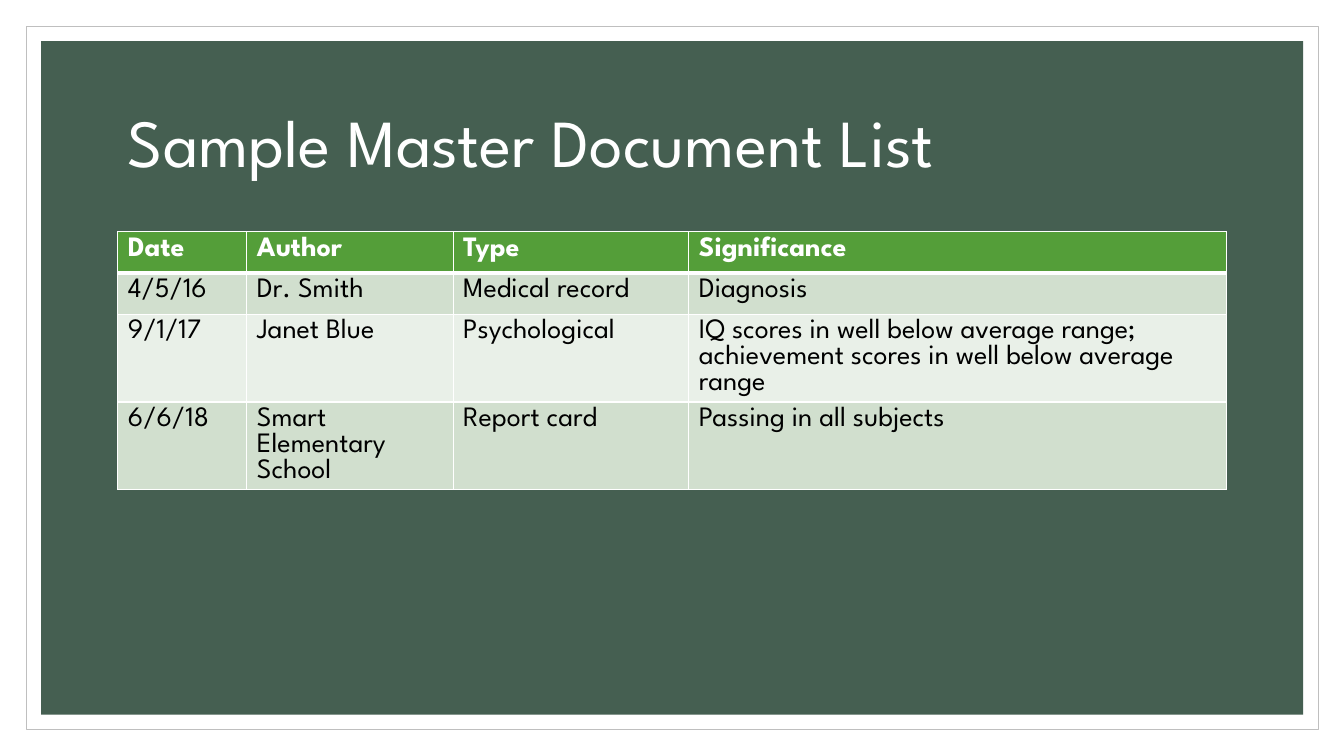
from dataclasses import dataclass

from lxml.etree import SubElement
from pptx import Presentation
from pptx.dml.color import RGBColor
from pptx.enum.shapes import MSO_SHAPE
from pptx.enum.text import MSO_ANCHOR, MSO_AUTO_SIZE, PP_ALIGN
from pptx.oxml.ns import qn
from pptx.util import Cm, Pt

FONT = "League Spartan"
WHITE, BLACK = "FFFFFF", "000000"
HEADER_FILL = "549E39"
BAND_FILLS = ("D1DFCE", "E9F0E8")
LEFT, WIDTH = 2.97, 27.94
ROW_HEIGHT = 1.04
COLUMN_WIDTHS = (3.25, 5.2, 5.94, 13.55)
DOCUMENTS = (
    ("Date", "Author", "Type", "Significance"),
    ("4/5/16", "Dr. Smith", "Medical record", "Diagnosis"),
    ("9/1/17", "Janet Blue", "Psychological",
     "IQ scores in well below average range; "
     "achievement scores in well below average range"),
    ("6/6/18", "Smart Elementary School", "Report card",
     "Passing in all subjects"),
)


@dataclass(frozen=True)
class Panel:
    left: float
    top: float
    width: float
    height: float
    fill: str
    line: str | None = None


PANELS = (
    Panel(0.66, 0.66, 32.56, 17.73, WHITE, "BFBFBF"),
    Panel(1.04, 1.04, 31.8, 16.97, "455F51"),
)


def rgb(value: str) -> RGBColor:
    return RGBColor.from_string(value)


def set_attributes(target, values: dict) -> None:
    for name, value in values.items():
        setattr(target, name, value)


def format_font(font, size: float, color: str, bold: bool = False) -> None:
    set_attributes(font, {"name": FONT, "size": Pt(size), "bold": bold})
    font.color.rgb = rgb(color)


def add_panel(s, panel: Panel) -> None:
    sp = s.shapes.add_shape(
        MSO_SHAPE.RECTANGLE, Cm(panel.left), Cm(panel.top),
        Cm(panel.width), Cm(panel.height))
    sp.shadow.inherit = False
    sp.fill.solid()
    sp.fill.fore_color.rgb = rgb(panel.fill)
    if panel.line:
        sp.line.color.rgb = rgb(panel.line)
        sp.line.width = Pt(0.5)
    else:
        sp.line.fill.background()


def add_title(s, text: str) -> None:
    sp = s.shapes.title
    set_attributes(sp, {"left": Cm(LEFT), "top": Cm(1.78),
                        "width": Cm(WIDTH), "height": Cm(3.81)})
    tf = sp.text_frame
    set_attributes(tf, {"word_wrap": True, "auto_size": MSO_AUTO_SIZE.NONE,
                        "vertical_anchor": MSO_ANCHOR.MIDDLE})
    p = tf.paragraphs[0]
    set_attributes(p, {"alignment": PP_ALIGN.LEFT, "line_spacing": 0.9})
    r = p.add_run()
    r.text = text
    format_font(r.font, 48, WHITE)
    # Bring the title in front of the panels
    s.shapes.element.append(sp.element)


def add_borders(cell, widths: dict[str, float]) -> None:
    properties = cell._tc.get_or_add_tcPr()
    for side, width in widths.items():
        line = SubElement(properties, qn(f"a:ln{side}"), w=str(Pt(width)))
        fill = SubElement(line, qn("a:solidFill"))
        SubElement(fill, qn("a:srgbClr"), val=WHITE)


def fill_cell(cell, text: str, row: int) -> None:
    header = row == 0
    # Borders come before the fill in the cell properties
    add_borders(cell, {"L": 1, "R": 1, "T": 3 if row == 1 else 1,
                       "B": 3 if header else 1})
    cell.fill.solid()
    cell.fill.fore_color.rgb = rgb(
        HEADER_FILL if header else BAND_FILLS[(row - 1) % 2])
    r = cell.text_frame.paragraphs[0].add_run()
    r.text = text
    format_font(r.font, 20, WHITE if header else BLACK, header)


def add_document_table(s) -> None:
    table = s.shapes.add_table(
        len(DOCUMENTS), len(COLUMN_WIDTHS), Cm(LEFT), Cm(5.84),
        Cm(WIDTH), Cm(ROW_HEIGHT * len(DOCUMENTS))).table
    for column, width in zip(table.columns, COLUMN_WIDTHS):
        column.width = Cm(width)
    for row, texts in enumerate(DOCUMENTS):
        table.rows[row].height = Cm(ROW_HEIGHT)
        for column, text in enumerate(texts):
            fill_cell(table.cell(row, column), text, row)


def main() -> None:
    prs = Presentation()
    set_attributes(prs, {"slide_width": Cm(33.87), "slide_height": Cm(19.05)})
    s = prs.slides.add_slide(prs.slide_layouts.get_by_name("Title Only"))

    # Framed background
    for panel in PANELS:
        add_panel(s, panel)

    # Title and document list
    add_title(s, "Sample Master Document List")
    add_document_table(s)
    prs.save("out.pptx")


if __name__ == "__main__":
    main()
